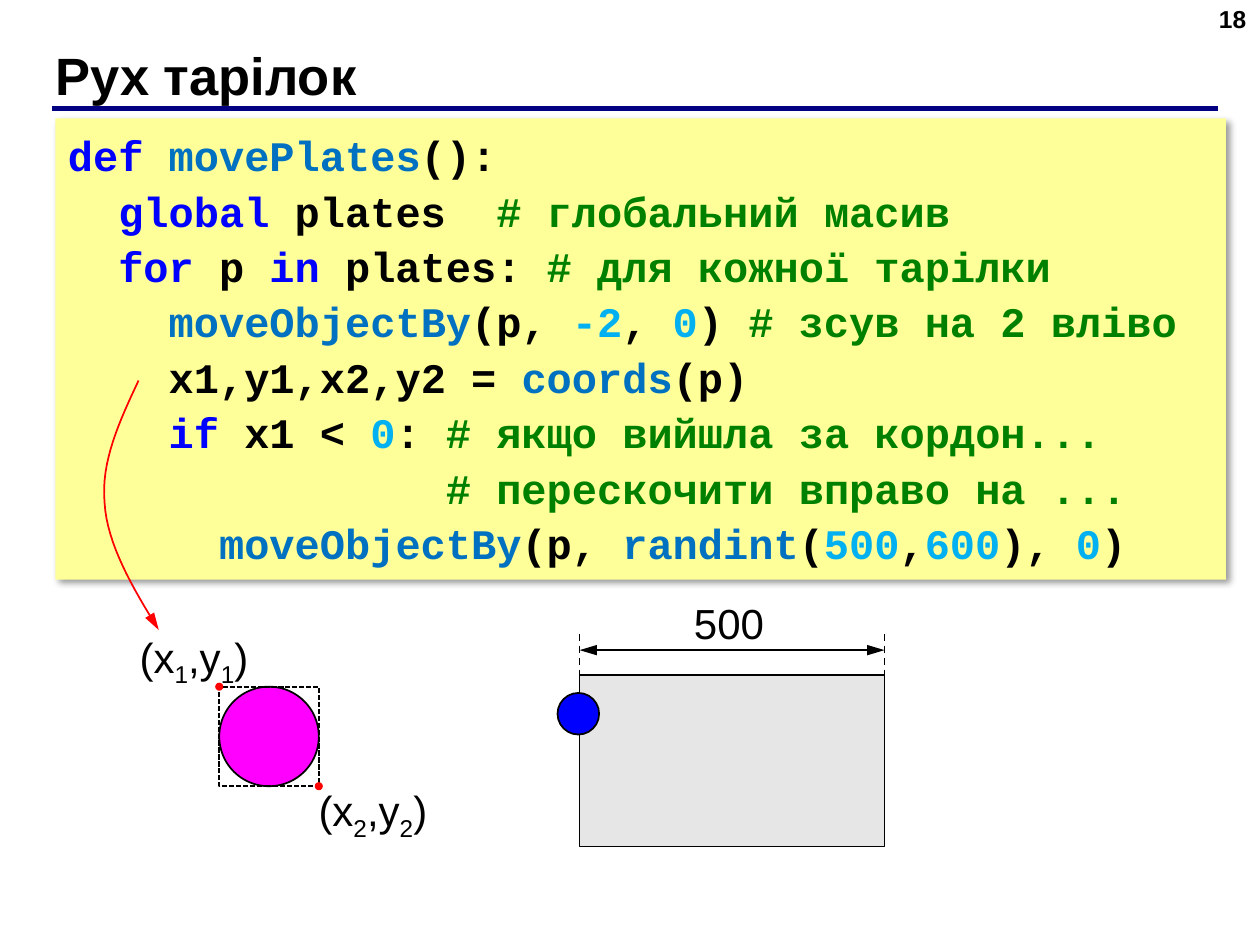
from pptx import Presentation
from pptx.dml.color import RGBColor as Color
from pptx.enum.dml import MSO_LINE as Dash
from pptx.enum.shapes import MSO_CONNECTOR as Connector, MSO_SHAPE as Preset
from pptx.enum.text import MSO_ANCHOR as Anchor, MSO_AUTO_SIZE as AutoSize, PP_ALIGN as Align
from pptx.oxml import parse_xml
from pptx.oxml.ns import nsdecls, qn
from pptx.oxml.xmlchemy import OxmlElement
from pptx.util import Inches, Pt

THEME = {
    "black": "000000", "keyword": "0000FF", "name": "0070C0", "number": "00B0F0",
    "comment": "008000", "rule": "000080", "code": "FFFF99", "plate": "FF00FF",
    "mark": "FF0000", "field": "E6E6E6",
    "sans": "Arial", "mono": "Courier New",
    "title_size": 30, "body_size": 24, "number_size": 14,
}


def write(shape, lines, size="body_size", font="sans", bold=False, align=Align.LEFT,
          anchor=Anchor.TOP, wrap=True, spacing=None, indents=None):
    frame = shape.text_frame
    frame.word_wrap = wrap
    frame.auto_size = AutoSize.NONE
    frame.vertical_anchor = anchor
    for index, line in enumerate(lines):
        paragraph = frame.paragraphs[0] if index == 0 else frame.add_paragraph()
        paragraph.alignment = align
        if spacing:
            paragraph.line_spacing = spacing
        if indents:
            properties = paragraph._p.get_or_add_pPr()
            properties.set("marL", str(indents[index]))
            properties.set("indent", "0")
        for text, role in line:
            run = paragraph.add_run()
            run.text = text
            run.font.name = THEME[font]
            run.font.size = Pt(THEME[size])
            run.font.bold = bold
            run.font.color.rgb = Color.from_string(THEME.get(role, THEME["black"]))
            if role == "subscript":
                run._r.get_or_add_rPr().set("baseline", "-25000")


def style(shape, fill=None, line="black", width=1, dash=None, ends=()):
    if hasattr(shape, "fill"):
        if fill:
            shape.fill.solid()
            shape.fill.fore_color.rgb = Color.from_string(THEME[fill])
        else:
            shape.fill.background()
    if line:
        shape.line.color.rgb = Color.from_string(THEME[line])
        shape.line.width = Pt(width)
        if dash:
            shape.line.dash_style = dash
    else:
        shape.line.fill.background()
    properties = shape._element.spPr
    for end in ends:
        arrow = OxmlElement(f"a:{end}End")
        for key, value in (("type", "triangle"), ("w", "med"), ("len", "lg")):
            arrow.set(key, value)
        properties.find(qn("a:ln")).append(arrow)
    properties.append(OxmlElement("a:effectLst"))


presentation = Presentation()
presentation.slide_width = Inches(10)
presentation.slide_height = Inches(7.5)
column = presentation.slide_width / 100
row = presentation.slide_height / 75
slide = presentation.slides.add_slide(presentation.slide_layouts[5])
shapes = slide.shapes

title = shapes.title
title.left, title.top = int(3.4 * column), int(3.3 * row)
title.width, title.height = int(91.6 * column), int(5.2 * row)
write(title, [[("Рух тарілок", "black")]], size="title_size", bold=True, anchor=Anchor.MIDDLE)

page_number = shapes.add_textbox(
    int(76.6 * column), int(-0.2 * row), int(23.3 * column), int(5.2 * row))
write(page_number, [[("18", "black")]], size="number_size", bold=True, align=Align.RIGHT)

code = [
    (0, [("def ", "keyword"), ("movePlates", "name"), ("():", "black")]),
    (2, [("global", "keyword"), (" plates  ", "black"), ("# глобальний масив", "comment")]),
    (2, [("for", "keyword"), (" p ", "black"), ("in", "keyword"), (" plates: ", "black"),
         ("# для кожної тарілки", "comment")]),
    (4, [("moveObjectBy", "name"), ("(p, ", "black"), ("-2", "number"), (", ", "black"),
         ("0", "number"), (") ", "black"), ("# зсув на 2 вліво", "comment")]),
    (4, [("x1,y1,x2,y2 = ", "black"), ("coords", "name"), ("(p)", "black")]),
    (4, [("if", "keyword"), (" x1 < ", "black"), ("0", "number"), (": ", "black"),
         ("# якщо вийшла за кордон...", "comment")]),
    (15, [("# перескочити вправо на ...", "comment")]),
    (6, [("moveObjectBy", "name"), ("(p, ", "black"), ("randint", "name"), ("(", "black"),
         ("500", "number"), (",", "black"), ("600", "number"), ("), ", "black"),
         ("0", "number"), (")", "black")]),
]
character_width = Pt(THEME["body_size"] * 0.6)
code_box = shapes.add_shape(Preset.RECTANGLE, int(4.4 * column), int(9.4 * row),
                            int(92.9 * column), int(36.6 * row))
style(code_box, fill="code", line=None)
code_box._element.spPr.find(qn("a:effectLst")).append(parse_xml(
    f'<a:outerShdw {nsdecls("a")} blurRad="{Pt(4)}" dist="{Pt(3)}" dir="2700000" algn="tl">'
    '<a:srgbClr val="000000"><a:alpha val="40000"/></a:srgbClr></a:outerShdw>'))
write(code_box, [line for _, line in code], font="mono", bold=True, spacing=1.1,
      indents=[depth * character_width for depth, _ in code])

plate_left, plate_top, plate_size, dot = 17.4, 54.5, 7.9, 0.5
field_left, field_top, field_width, field_height = 46, 53.6, 24.2, 13.6
field_right = field_left + field_width
ball = 3.3
plate_group = shapes.add_group_shape()
field_group = shapes.add_group_shape()

for parent, preset, left, top, width, height, look in [
    (plate_group, Preset.OVAL, plate_left, plate_top, plate_size, plate_size,
     {"fill": "plate"}),
    (plate_group, Preset.RECTANGLE, plate_left, plate_top, plate_size, plate_size,
     {"dash": Dash.SQUARE_DOT}),
    *[(plate_group, Preset.OVAL, plate_left + shift - dot / 2, plate_top + shift - dot / 2,
       dot, dot, {"fill": "mark", "line": "mark"}) for shift in (0, plate_size)],
    (field_group, Preset.RECTANGLE, field_left, field_top, field_width, field_height,
     {"fill": "field"}),
    (slide, Preset.OVAL, field_left - ball / 2 - 0.1, 55, ball, ball, {"fill": "keyword"}),
]:
    shape = parent.shapes.add_shape(preset, int(left * column), int(top * row),
                                    int(width * column), int(height * row))
    style(shape, **look)

for parent, start_x, start_y, end_x, end_y, look in [
    *[(field_group, side, 50.3, side, field_top, {"dash": Dash.DASH})
      for side in (field_left, field_right)],
    (field_group, field_left, 51.6, field_right, 51.6, {"ends": ("head", "tail")}),
    (slide, 4.1, 8.6, 96.7, 8.6, {"line": "rule", "width": 3}),
]:
    connector = parent.shapes.add_connector(
        Connector.STRAIGHT, int(start_x * column), int(start_y * row),
        int(end_x * column), int(end_y * row))
    style(connector, **look)

for parent, left, top, width, text in [
    *[(plate_group, left, top, 11,
       [("(x", "black"), (corner, "subscript"), (",y", "black"),
        (corner, "subscript"), (")", "black")])
      for corner, left, top in (("1", 10.1, 49.6), ("2", 24.3, 61.8))],
    (field_group, 54.1, 46.9, 7.6, [("500", "black")]),
]:
    label = parent.shapes.add_textbox(int(left * column), int(top * row),
                                      int(width * column), int(5.1 * row))
    write(label, [text], wrap=False)

curves = [
    [(11, 30.2), (9.5, 33.4), (8, 36.6), (8.3, 39.9)],
    [(8.3, 39.9), (8.5, 43.2), (10.5, 46.6), (12.6, 50)],
]
steps = 16
points = []
for curve in curves:
    for step in range(1, steps + 1):
        t = step / steps
        weights = ((1 - t) ** 3, 3 * t * (1 - t) ** 2, 3 * t ** 2 * (1 - t), t ** 3)
        points.append((int(sum(w * x for w, (x, _) in zip(weights, curve)) * column),
                       int(sum(w * y for w, (_, y) in zip(weights, curve)) * row)))
start_x, start_y = curves[0][0]
builder = shapes.build_freeform(int(start_x * column), int(start_y * row))
builder.add_line_segments(points, close=False)
style(builder.convert_to_shape(), line="mark", ends=("tail",))

presentation.save("out.pptx")
